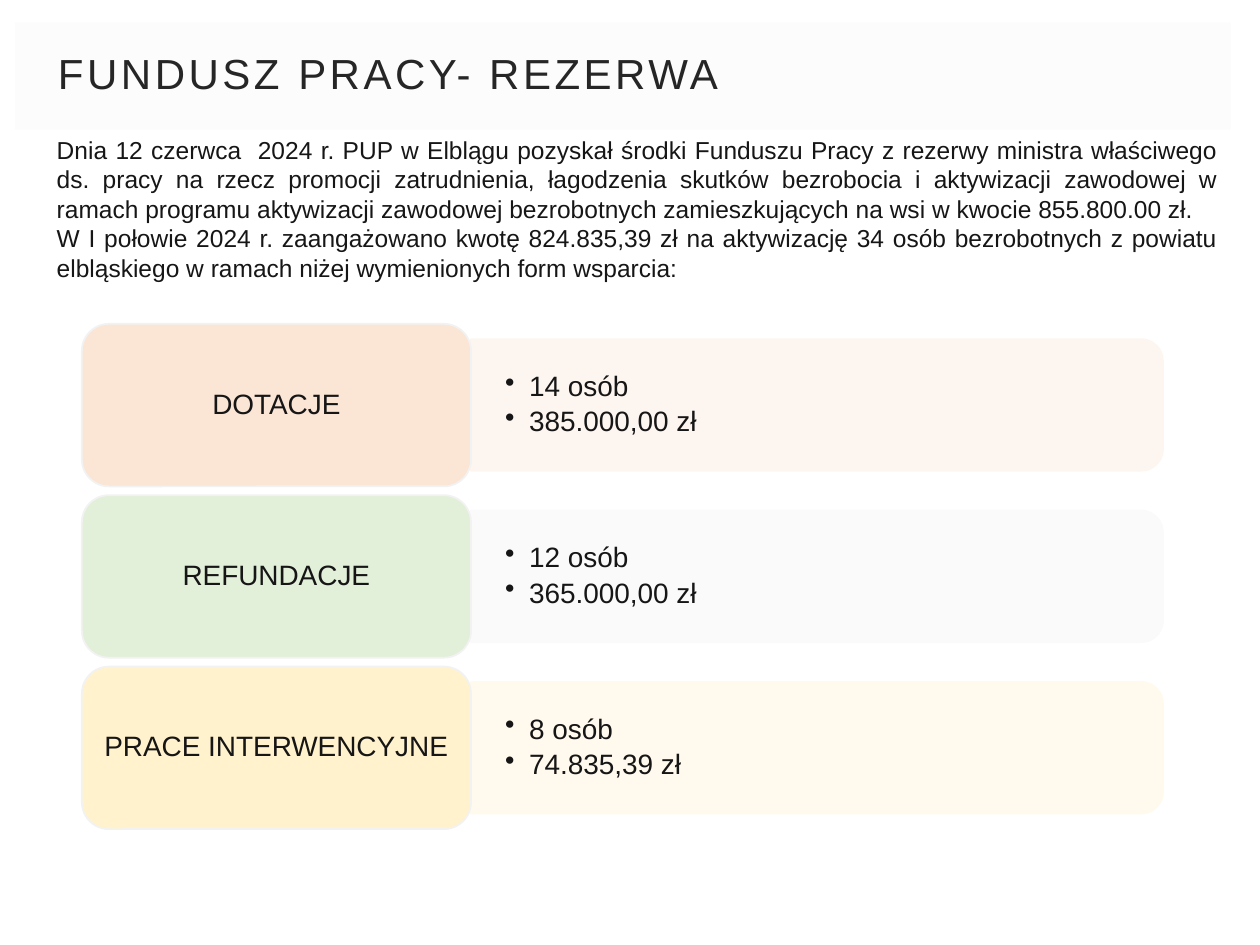
from lxml import etree
from pptx import Presentation
from pptx.dml.color import RGBColor
from pptx.enum import shapes, text
from pptx.oxml.ns import qn
from pptx.util import Inches, Pt

INK = "171616"
ROWS = [
    ("DOTACJE", ["14 osób", "385.000,00 zł"], "FBE5D5", "FDF5EF"),
    ("REFUNDACJE", ["12 osób", "365.000,00 zł"], "E2EFD9", "FAFAFA"),
    ("PRACE INTERWENCYJNE", ["8 osób", "74.835,39 zł"], "FFF2CC", "FFFAEC"),
]
INTRO = [
    "Dnia 12 czerwca  2024 r. PUP w Elblągu pozyskał środki Funduszu Pracy "
    "z rezerwy ministra właściwego ds. pracy na rzecz promocji zatrudnienia, "
    "łagodzenia skutków bezrobocia i aktywizacji zawodowej w ramach programu "
    "aktywizacji zawodowej bezrobotnych zamieszkujących na wsi w kwocie "
    "855.800.00 zł.",
    "W I połowie 2024 r. zaangażowano kwotę 824.835,39 zł na aktywizację "
    "34 osób bezrobotnych z powiatu elbląskiego w ramach niżej wymienionych "
    "form wsparcia:",
]


def rgb(code):
    return RGBColor.from_string(code)


def place(shape, box):
    shape.left, shape.top, shape.width, shape.height = map(Inches, box)


def write(shape, lines, size, align, color=INK, space=1.0, after=0,
          pad=(0.1, 0.05), anchor=text.MSO_ANCHOR.MIDDLE):
    """Fill a shape with evenly styled paragraphs and return them."""
    frame = shape.text_frame
    frame.text = "\n".join(lines)
    frame.word_wrap = True
    frame.auto_size = text.MSO_AUTO_SIZE.NONE
    frame.vertical_anchor = anchor
    frame.margin_left = frame.margin_right = Inches(pad[0])
    frame.margin_top = frame.margin_bottom = Inches(pad[1])
    for para in frame.paragraphs:
        para.alignment = align
        para.line_spacing = space
        para.space_before, para.space_after = Pt(0), Pt(after)
        para.font.name, para.font.size = "Arial", Pt(size)
        para.font.color.rgb = rgb(color)
    return frame.paragraphs


def bullet(para, mark=None, indent=0.0):
    """Set a bullet with a hanging indent, or none without a mark."""
    props = para._p.get_or_add_pPr()
    props.set("marL", str(Inches(indent)))
    props.set("indent", str(-Inches(indent)))
    if mark:
        etree.SubElement(props, qn("a:buChar")).set("char", mark)
    else:
        etree.SubElement(props, qn("a:buNone"))
    # The schema puts bullets before the default run properties.
    props.append(props.find(qn("a:defRPr")))


def panel(slide, kind, box, fill, line):
    shape = slide.shapes.add_shape(kind, *map(Inches, box))
    shape.shadow.inherit = False
    shape.fill.solid()
    shape.fill.fore_color.rgb = rgb(fill)
    shape.line.color.rgb = rgb(line)
    shape.line.width = Pt(1)
    return shape


def fade(shape, share):
    """Make the fill and line of a shape partly transparent."""
    for color in shape._element.spPr.iter(qn("a:srgbClr")):
        etree.SubElement(color, qn("a:alpha")).set("val", str(share * 1000))


def heading(slide, box):
    title = slide.shapes.title
    place(title, box)
    title.fill.solid()
    title.fill.fore_color.rgb = rgb("FCFCFC")
    para, = write(title, ["FUNDUSZ PRACY- REZERWA"], 24, text.PP_ALIGN.LEFT,
                  "262626", 0.9, pad=(0.34, 0.2))
    para.runs[0].font._element.set("spc", "200")


def intro(slide, box):
    body = slide.placeholders[1]
    place(body, box)
    for para in write(body, INTRO, 14, text.PP_ALIGN.JUSTIFY,
                      anchor=text.MSO_ANCHOR.TOP):
        bullet(para)


def row(slide, box, name, facts, dark, pale):
    """Place a label and, to its right, a bar with bulleted facts."""
    left, top, width, height = box
    split = width * 0.36
    wide, thick = width - split, height * 0.81
    start, mid = left + split, top + height / 2
    # The bar stands upright and is turned so its round corners face right.
    bar = panel(slide, shapes.MSO_SHAPE.ROUND_2_SAME_RECTANGLE,
                (start + (wide - thick) / 2, mid - wide / 2, thick, wide),
                pale, pale)
    bar.rotation = 90
    fade(bar, 90)
    note = slide.shapes.add_textbox(
        *map(Inches, (start, mid - thick / 2, wide, thick)))
    for para in write(note, facts, 16, text.PP_ALIGN.LEFT, space=0.9,
                      after=3, pad=(0.27, 0.14)):
        bullet(para, "•", 0.19)
    label = panel(slide, shapes.MSO_SHAPE.ROUNDED_RECTANGLE,
                  (left, top, split, height), dark, "F2F2F2")
    write(label, [name], 16, text.PP_ALIGN.CENTER, space=0.9, pad=(0.07, 0.03))


def table(slide, box, gap=0.07):
    left, top, width, height = box
    step = (height + gap) / len(ROWS)
    for i, data in enumerate(ROWS):
        row(slide, (left, top + i * step, width, step - gap), *data)


def main():
    deck = Presentation()
    deck.slide_width, deck.slide_height = Inches(10), Inches(7.5)
    slide = deck.slides.add_slide(deck.slide_layouts[1])
    heading(slide, (0.12, 0.18, 9.65, 0.85))
    table(slide, (0.65, 2.57, 8.58, 4.01))
    intro(slide, (0.35, 1.02, 9.42, 1.28))
    deck.save("out.pptx")


if __name__ == "__main__":
    main()
